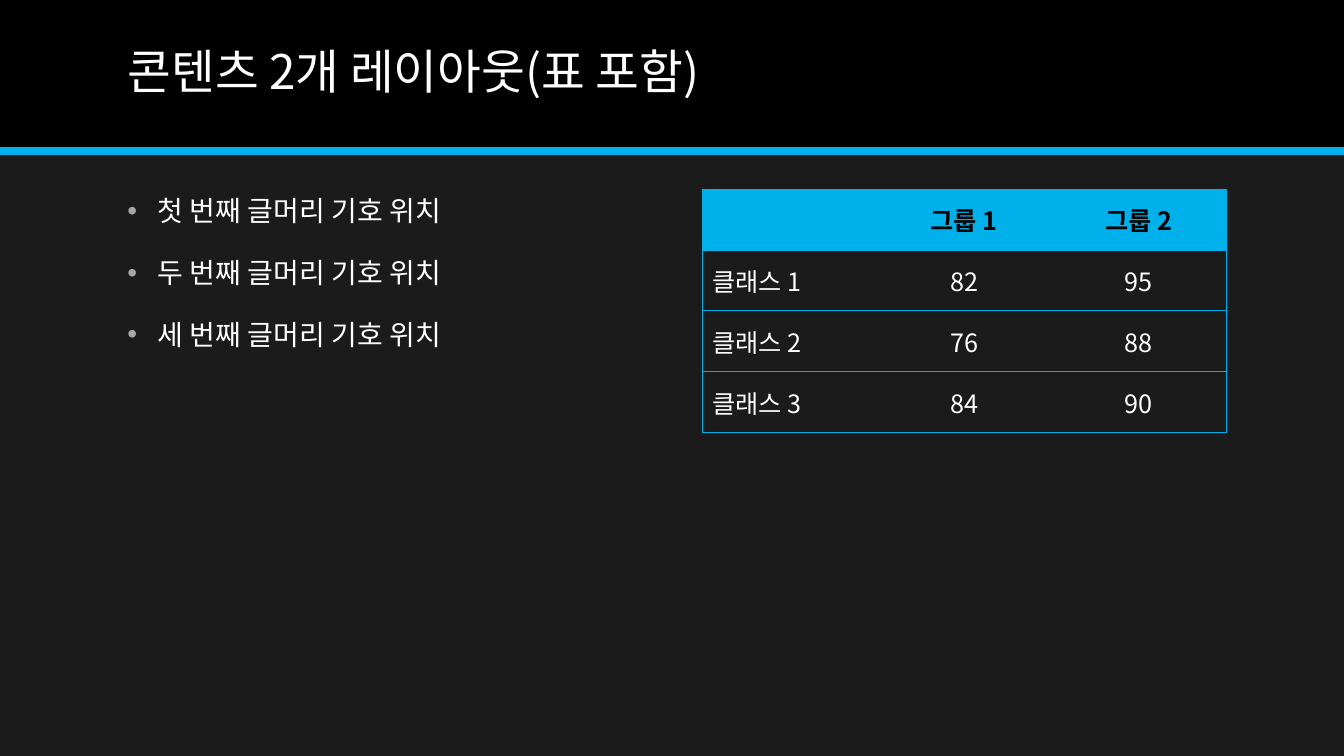
"""Build a dark two-content slide with a bullet list and a score table."""
import dataclasses
import typing

import lxml.etree
import pptx
import pptx.dml.color
import pptx.enum.shapes
import pptx.enum.text
import pptx.oxml.ns
import pptx.util

Pt = pptx.util.Pt
qn = pptx.oxml.ns.qn
ALIGN = pptx.enum.text.PP_ALIGN
MIDDLE = pptx.enum.text.MSO_ANCHOR.MIDDLE

FONT = "Noto Sans CJK KR"
WHITE, BLACK, ACCENT = "FFFFFF", "000000", "00B0EA"
BACKDROP, BULLET_GREY = "1B1B1B", "A6A6A6"
SLIDE_WIDTH, SLIDE_HEIGHT = 960, 540
BAND_HEIGHT = 108
BULLET_INDENT = 21.6


@dataclasses.dataclass(frozen=True)
class Box:
    left: float
    top: float
    width: float
    height: float

    def lengths(self) -> tuple:
        return tuple(Pt(v) for v in dataclasses.astuple(self))


@dataclasses.dataclass(frozen=True)
class TextStyle:
    size: float
    color: str
    bold: bool = False


TITLE_STYLE = TextStyle(34, WHITE)
BULLET_STYLE = TextStyle(20, WHITE)
HEADER_STYLE = TextStyle(18, BLACK, True)
SCORE_STYLE = TextStyle(18, WHITE)

TITLE_BOX = Box(84, 10, 792, 86.4)
BULLET_BOX = Box(84, 135, 374.4, 351)
SCORE_BOX = Box(501.6, 135, 374.4, 174)

BULLETS = ["첫 번째 글머리 기호 위치", "두 번째 글머리 기호 위치", "세 번째 글머리 기호 위치"]
SCORES = [
    ["", "그룹 1", "그룹 2"],
    ["클래스 1", "82", "95"],
    ["클래스 2", "76", "88"],
    ["클래스 3", "84", "90"],
]


def rgb(value: str) -> pptx.dml.color.RGBColor:
    return pptx.dml.color.RGBColor.from_string(value)


def paint(fill: typing.Any, color: str) -> None:
    fill.solid()
    fill.fore_color.rgb = rgb(color)


def style_paragraph(paragraph: typing.Any, style: TextStyle) -> None:
    font = paragraph.font
    font.size = Pt(style.size)
    font.bold = style.bold
    font.name = FONT
    font.color.rgb = rgb(style.color)
    latin = paragraph._p.pPr.find(qn("a:defRPr")).find(qn("a:latin"))
    east_asian = lxml.etree.Element(qn("a:ea"), typeface=FONT)
    latin.addnext(east_asian)


def add_bullet(paragraph: typing.Any) -> None:
    properties = paragraph._p.get_or_add_pPr()
    properties.set("marL", str(Pt(BULLET_INDENT)))
    properties.set("indent", str(-Pt(BULLET_INDENT)))
    bullet_color = lxml.etree.SubElement(properties, qn("a:buClr"))
    lxml.etree.SubElement(bullet_color, qn("a:srgbClr"), val=BULLET_GREY)
    lxml.etree.SubElement(properties, qn("a:buFont"), typeface="Arial")
    lxml.etree.SubElement(properties, qn("a:buChar"), char="•")


def set_borders(cell: typing.Any, visible: dict[str, bool]) -> None:
    properties = cell._tc.get_or_add_tcPr()
    for side, shown in visible.items():
        border = lxml.etree.SubElement(properties, qn(f"a:ln{side}"), w=str(Pt(0.5)))
        if shown:
            stroke = lxml.etree.SubElement(border, qn("a:solidFill"))
            lxml.etree.SubElement(stroke, qn("a:srgbClr"), val=ACCENT)
        else:
            lxml.etree.SubElement(border, qn("a:noFill"))


def draw_band(slide: typing.Any) -> None:
    band = slide.shapes.add_shape(
        pptx.enum.shapes.MSO_SHAPE.RECTANGLE, *Box(0, 0, SLIDE_WIDTH, BAND_HEIGHT).lengths()
    )
    band.shadow.inherit = False
    paint(band.fill, BLACK)
    band.line.fill.background()
    rule = slide.shapes.add_connector(
        pptx.enum.shapes.MSO_CONNECTOR.STRAIGHT,
        Pt(0), Pt(BAND_HEIGHT), Pt(SLIDE_WIDTH), Pt(BAND_HEIGHT),
    )
    rule.line.width = Pt(6)
    rule.line.color.rgb = rgb(ACCENT)
    lxml.etree.SubElement(rule._element.spPr, qn("a:effectLst"))


def draw_title(slide: typing.Any) -> None:
    title = slide.shapes.title
    title.left, title.top, title.width, title.height = TITLE_BOX.lengths()
    frame = title.text_frame
    frame.text = "콘텐츠 2개 레이아웃(표 포함)"
    frame.vertical_anchor = MIDDLE
    heading = frame.paragraphs[0]
    heading.alignment = ALIGN.LEFT
    heading.line_spacing = 0.9
    style_paragraph(heading, TITLE_STYLE)
    slide.shapes._spTree.append(title._element)


def draw_bullets(slide: typing.Any) -> None:
    frame = slide.shapes.add_textbox(*BULLET_BOX.lengths()).text_frame
    frame.word_wrap = True
    frame.text = "\n".join(BULLETS)
    for index, paragraph in enumerate(frame.paragraphs):
        add_bullet(paragraph)
        paragraph.line_spacing = Pt(24)
        paragraph.space_before = Pt(20 if index else 0)
        style_paragraph(paragraph, BULLET_STYLE)


def draw_scores(slide: typing.Any) -> None:
    row_count, column_count = len(SCORES), len(SCORES[0])
    scores = slide.shapes.add_table(row_count, column_count, *SCORE_BOX.lengths()).table
    scores.horz_banding = False
    for column in scores.columns:
        column.width = Pt(SCORE_BOX.width / column_count)
    for row_index, values in enumerate(SCORES):
        scores.rows[row_index].height = Pt(SCORE_BOX.height / row_count)
        for column_index, value in enumerate(values):
            cell = scores.cell(row_index, column_index)
            cell.text = value
            cell.vertical_anchor = MIDDLE
            set_borders(cell, {
                "L": column_index == 0,
                "R": column_index == column_count - 1,
                "T": True,
                "B": True,
            })
            if row_index == 0:
                paint(cell.fill, ACCENT)
            else:
                cell.fill.background()
            paragraph = cell.text_frame.paragraphs[0]
            paragraph.alignment = ALIGN.CENTER if column_index else ALIGN.LEFT
            style_paragraph(paragraph, SCORE_STYLE if row_index else HEADER_STYLE)


def main() -> None:
    deck = pptx.Presentation()
    deck.slide_width, deck.slide_height = Pt(SLIDE_WIDTH), Pt(SLIDE_HEIGHT)
    slide = deck.slides.add_slide(deck.slide_layouts[5])
    paint(slide.background.fill, BACKDROP)
    draw_band(slide)
    draw_title(slide)
    draw_bullets(slide)
    draw_scores(slide)
    deck.save("out.pptx")


if __name__ == "__main__":
    main()
